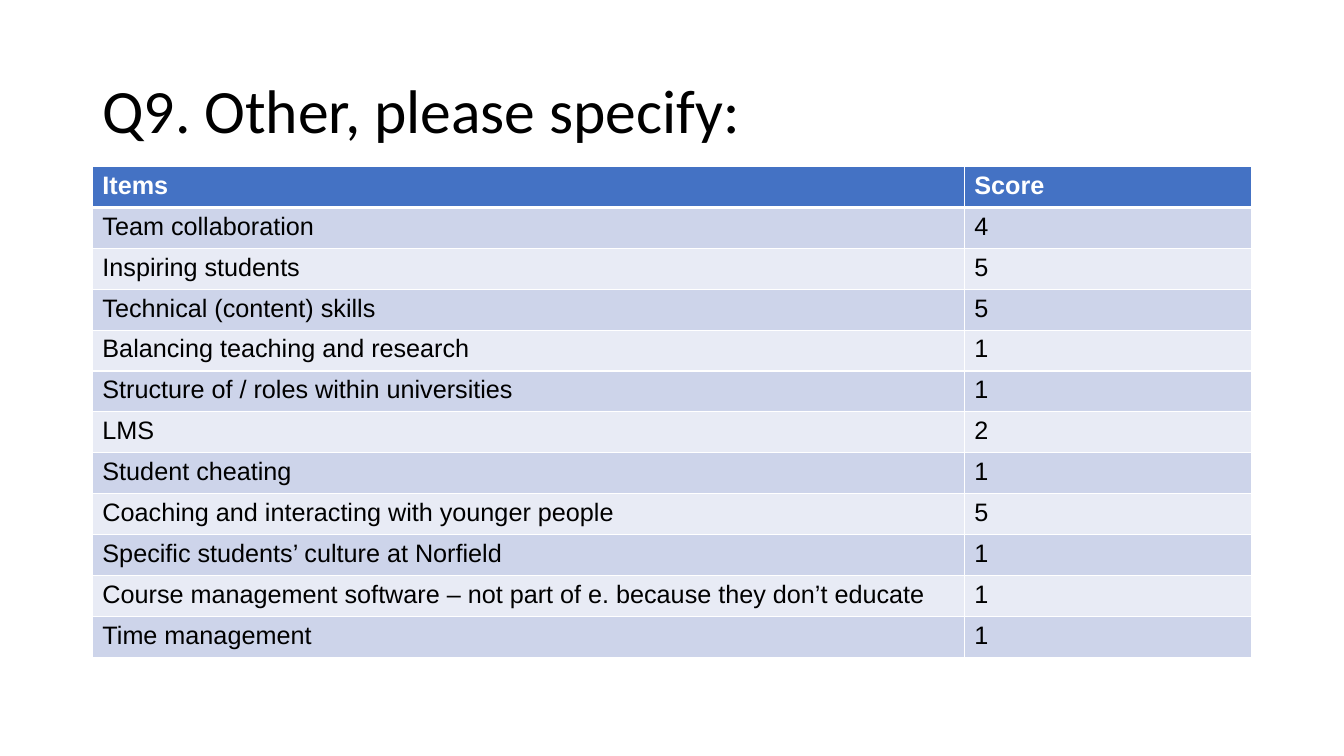
from lxml import etree
from pptx import Presentation
from pptx.dml.color import RGBColor
from pptx.enum.text import MSO_ANCHOR, MSO_AUTO_SIZE, PP_ALIGN
from pptx.oxml.ns import qn
from pptx.util import Pt

LEFT, MIDDLE, NO_FIT = PP_ALIGN.LEFT, MSO_ANCHOR.MIDDLE, MSO_AUTO_SIZE.NONE

TITLE = "Q9. Other, please specify:"
ROWS = [
    ("Items", "Score"),
    ("Team collaboration", "4"),
    ("Inspiring students", "5"),
    ("Technical (content) skills", "5"),
    ("Balancing teaching and research", "1"),
    ("Structure of / roles within universities", "1"),
    ("LMS", "2"),
    ("Student cheating", "1"),
    ("Coaching and interacting with younger people", "5"),
    ("Specific students’ culture at Norfield", "1"),
    ("Course management software – not part of e. because they don’t educate", "1"),
    ("Time management", "1"),
]
COLORS = {
    "header": "4472C4",
    "odd": "CDD4EA",
    "even": "E8EBF5",
    "border": "FFFFFF",
    "header_text": "FFFFFF",
    "text": "000000",
}
LEFT_EDGE, TABLE_TOP = 66, 119
COL_WIDTHS = (622.8, 205.2)
ROW_HEIGHT = 29.2


def style_text(tf, font, size, color, bold=False):
    for p in tf.paragraphs:
        p.alignment = LEFT
        for r in p.runs:
            r.font.name = font
            r.font.size = Pt(size)
            r.font.bold = bold
            r.font.color.rgb = RGBColor.from_string(COLORS[color])


def add_border(cell, side, width):
    ln = etree.SubElement(cell._tc.get_or_add_tcPr(), qn(f"a:ln{side}"), w=str(Pt(width)))
    fill = etree.SubElement(ln, qn("a:solidFill"))
    etree.SubElement(fill, qn("a:srgbClr"), val=COLORS["border"])


def add_title(s):
    title = s.shapes.title
    title.left, title.top = Pt(LEFT_EDGE), Pt(28.8)
    title.width, title.height = Pt(sum(COL_WIDTHS)), Pt(104.4)
    tf = title.text_frame
    tf.text = TITLE
    tf.word_wrap = True
    tf.auto_size = NO_FIT
    tf.vertical_anchor = MIDDLE
    tf.paragraphs[0].line_spacing = 0.9
    style_text(tf, "Calibri", 44, "text")


def add_score_table(s):
    table = s.shapes.add_table(
        len(ROWS), len(COL_WIDTHS), Pt(LEFT_EDGE), Pt(TABLE_TOP),
        Pt(sum(COL_WIDTHS)), Pt(ROW_HEIGHT * len(ROWS))).table
    for column, width in zip(table.columns, COL_WIDTHS):
        column.width = Pt(width)
    for i, values in enumerate(ROWS):
        table.rows[i].height = Pt(ROW_HEIGHT)
        header = i == 0
        band = "header" if header else "odd" if i % 2 else "even"
        widths = {"L": 1, "R": 1, "T": 3 if i == 1 else 1, "B": 3 if header else 1}
        for j, value in enumerate(values):
            cell = table.cell(i, j)
            cell.text = value
            style_text(cell.text_frame, "Arial", 18,
                       "header_text" if header else "text", header)
            for side, width in widths.items():
                add_border(cell, side, width)
            cell.fill.solid()
            cell.fill.fore_color.rgb = RGBColor.from_string(COLORS[band])


def main():
    prs = Presentation()
    prs.slide_width, prs.slide_height = Pt(960), Pt(540)
    s = prs.slides.add_slide(prs.slide_layouts[5])
    add_title(s)
    add_score_table(s)
    prs.save("out.pptx")


if __name__ == "__main__":
    main()
